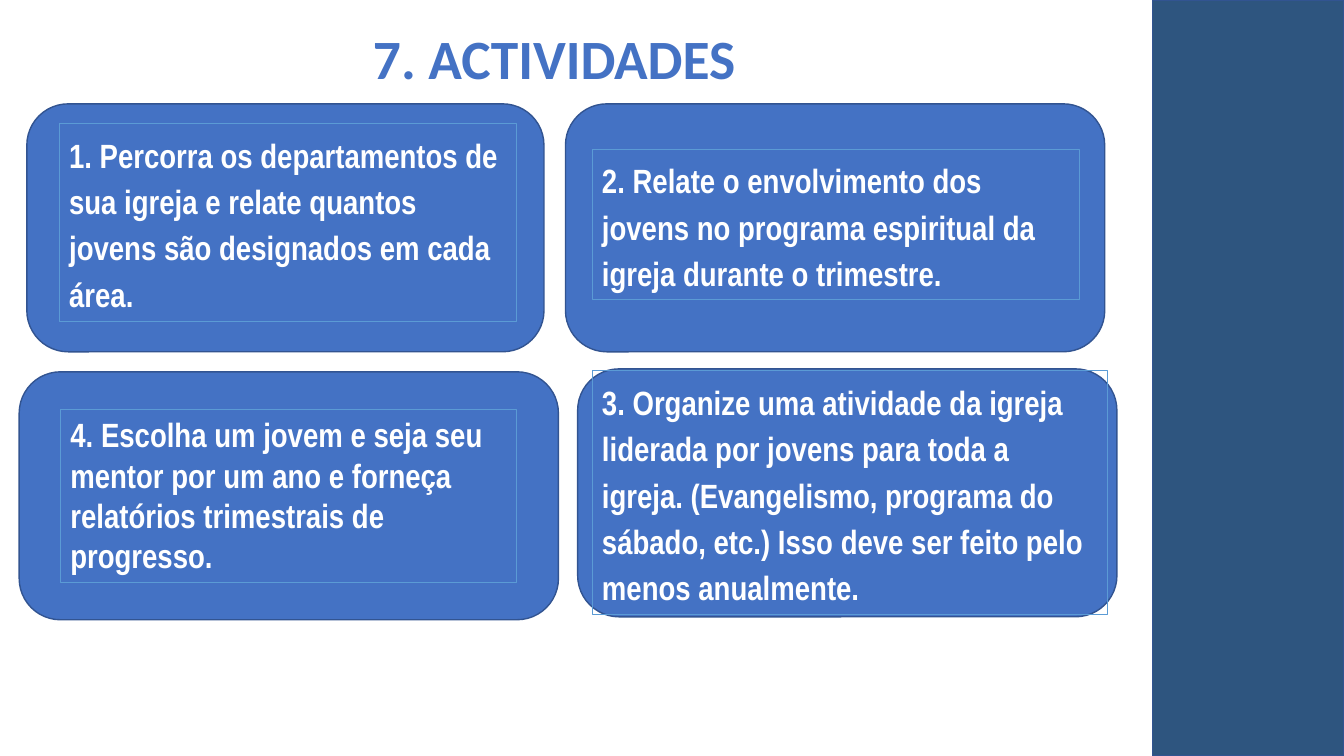
from pptx import Presentation
from pptx.dml.color import RGBColor
from pptx.enum.shapes import MSO_SHAPE
from pptx.enum.text import MSO_ANCHOR, MSO_AUTO_SIZE, PP_ALIGN
from pptx.util import Pt

RECTANGLE = MSO_SHAPE.RECTANGLE
ROUNDED_PANEL = MSO_SHAPE.FLOWCHART_ALTERNATE_PROCESS
TOP, MIDDLE = MSO_ANCHOR.TOP, MSO_ANCHOR.MIDDLE
LEFT = PP_ALIGN.LEFT
GROW = MSO_AUTO_SIZE.SHAPE_TO_FIT_TEXT
FIXED = MSO_AUTO_SIZE.NONE

COLOURS = {
    "panel": "4472C4",
    "panel_line": "325491",
    "sidebar": "2E557F",
    "frame": "5B9BD5",
    "text": "FFFFFF",
}

# Boxes are (left, top, width, height) in points.
TITLE = "7. ACTIVIDADES"
TITLE_BOX = (259.2, 13.7, 278, 60.5)
SIDEBAR_BOX = (823, 0, 137, 540)
PANEL_HEIGHT = 177.1

ACTIVITIES = [
    {
        "text": "1. Percorra os departamentos de sua igreja e relate quantos "
                "jovens são designados em cada área.",
        "panel": (19.2, 74.2, 369.4),
        "frame": (42.3, 88.3, 326.9, 141.3),
        "spacing": 1.15,
    },
    {
        "text": "2. Relate o envolvimento dos jovens no programa espiritual da "
                "igreja durante o trimestre.",
        "panel": (403.9, 74.2, 385.2),
        "frame": (422.9, 106.7, 347.8, 107.3),
        "spacing": 1.15,
    },
    {
        "text": "3. Organize uma atividade da igreja liderada por jovens para "
                "toda a igreja. (Evangelismo, programa do sábado, etc.) Isso "
                "deve ser feito pelo menos anualmente.",
        "panel": (412.6, 263.5, 385.2),
        "frame": (422.9, 264.8, 368, 174.3),
        "spacing": 1.15,
    },
    {
        "text": "4. Escolha um jovem e seja seu mentor por um ano e forneça "
                "relatórios trimestrais de progresso.",
        "panel": (13.7, 265.6, 385.2),
        "frame": (43.2, 292.3, 325.6, 123.9),
        "spacing": 1,
    },
]


def colour(name):
    return RGBColor.from_string(COLOURS[name])


def add_box(slide, kind, box, line, line_width, fill=None):
    shape = slide.shapes.add_shape(kind, *(Pt(length) for length in box))
    shape.shadow.inherit = False
    if fill:
        shape.fill.solid()
        shape.fill.fore_color.rgb = colour(fill)
    else:
        shape.fill.background()
    shape.line.color.rgb = colour(line)
    shape.line.width = Pt(line_width)
    return shape


def write(shape, text, *, font, size, color, spacing, anchor, fit):
    frame = shape.text_frame
    frame.word_wrap = True
    frame.auto_size = fit
    frame.vertical_anchor = anchor
    paragraph = frame.paragraphs[0]
    paragraph.text = text
    paragraph.alignment = LEFT
    paragraph.line_spacing = spacing
    paragraph.font.name = font
    paragraph.font.size = Pt(size)
    paragraph.font.bold = True
    paragraph.font.color.rgb = colour(color)


def main():
    presentation = Presentation()
    presentation.slide_width, presentation.slide_height = Pt(960), Pt(540)
    title_only = presentation.slide_layouts.get_by_name("Title Only")
    slide = presentation.slides.add_slide(title_only)

    title = slide.shapes.title
    title.left, title.top, title.width, title.height = (
        Pt(length) for length in TITLE_BOX)
    write(title, TITLE, font="Calibri", size=39.6, color="panel",
          spacing=0.9, anchor=MIDDLE, fit=FIXED)

    add_box(slide, RECTANGLE, SIDEBAR_BOX, "panel_line", 1, fill="sidebar")
    for activity in ACTIVITIES:
        add_box(slide, ROUNDED_PANEL, (*activity["panel"], PANEL_HEIGHT),
                "panel_line", 1, fill="panel")
        frame = add_box(slide, RECTANGLE, activity["frame"], "frame", 0.5)
        write(frame, activity["text"], font="Arial Narrow", size=24,
              color="text", spacing=activity["spacing"], anchor=TOP, fit=GROW)

    presentation.save("out.pptx")


if __name__ == "__main__":
    main()
